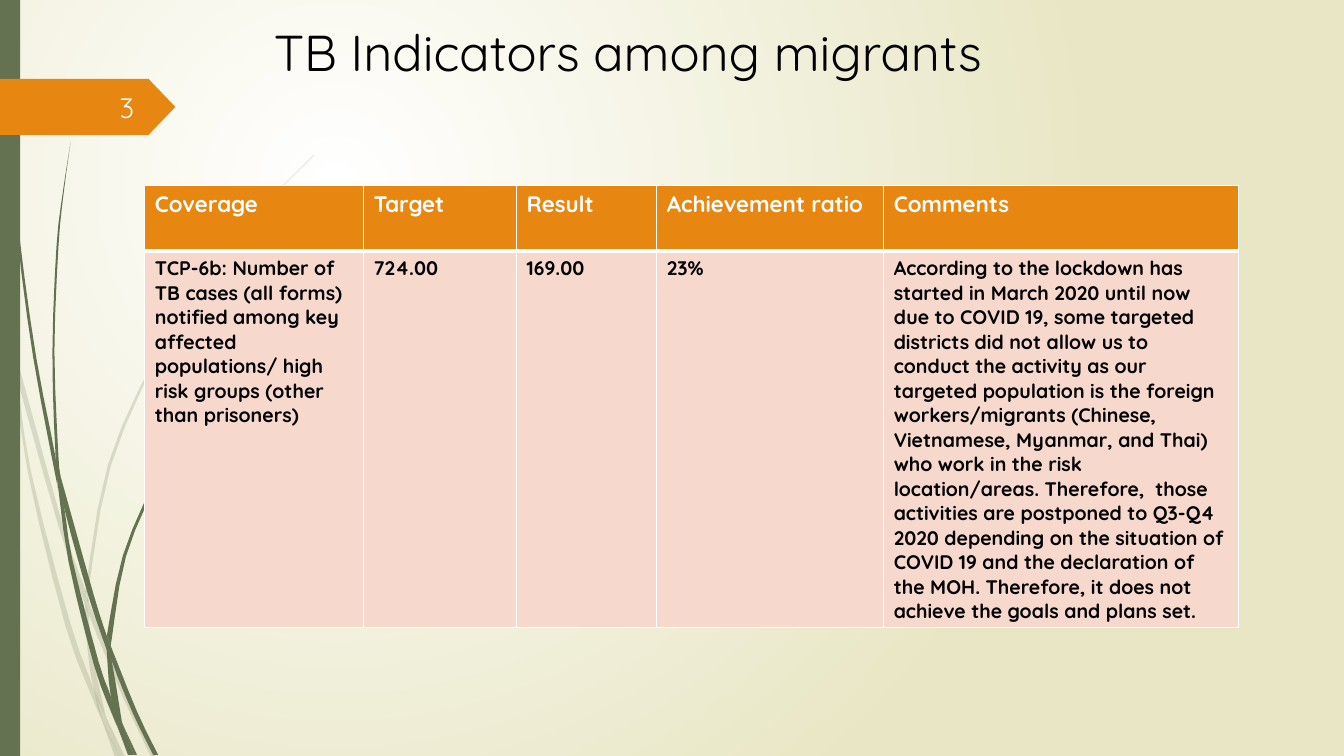
from lxml import etree
from pptx import Presentation, util as u
from pptx.dml import color
from pptx.enum import shapes, text
from pptx.oxml import ns

FONT = "Quicksand"
GREEN, ORANGE, PINK, WHITE, BLACK = "647252", "E78712", "F6D9CC", "FFFFFF", "000000"
GRID = 0.0254

PALE_BLADES = [
    ([(0, 299), (10, 344), (11, 350)], [(0, 282), (9, 322), (11, 350)]),
    ([(17, 376), (58, 522), (84, 599)], [(14, 345), (62, 520), (85, 586)]),
    ([(88, 610), (123, 694), (150, 751)], [(88, 596), (92, 607), (127, 692), (155, 751)]),
    ([(105, 711), (119, 751)], [(105, 711), (124, 751)]),
    ([(11, 350), (28, 470), (65, 621), (92, 693), (101, 714)],
     [(11, 350), (17, 376), (31, 469), (70, 619), (93, 683), (101, 714)]),
    ([(84, 599), (87, 646), (93, 683), (105, 711)], [(84, 599), (88, 610), (91, 646), (105, 711)]),
    ([(312, 153), (268, 197), (228, 244), (158, 348), (107, 461), (85, 584), (85, 586)],
     [(312, 154), (268, 198), (229, 245), (160, 349), (110, 462), (88, 584), (88, 596)]),
    ([(101, 714), (114, 751)], [(101, 714), (119, 751)]),
    ([(85, 586), (84, 599)], [(88, 596), (88, 610)]),
    ([(93, 683), (101, 714), (119, 751)], [(93, 683), (105, 711), (119, 751)]),
]
DARK_BLADES = [
    ([(3, 0), (4, 48), (7, 110), (17, 233), (33, 355), (56, 477), (57, 481)],
     [(4, 0), (5, 48), (8, 109), (19, 232), (36, 355), (55, 453), (57, 481)]),
    ([(60, 472), (64, 505), (88, 592), (106, 645)], [(60, 472), (93, 590), (106, 631)]),
    ([(110, 641), (111, 656), (132, 708), (152, 749)], [(110, 641), (136, 706), (157, 749)]),
    ([(57, 477), (68, 557), (93, 659), (111, 708), (117, 722)],
     [(57, 477), (64, 505), (72, 556), (98, 657), (110, 691), (117, 722)]),
    ([(70, 141), (62, 193), (56, 245), (52, 349), (55, 449), (60, 472)],
     [(70, 141), (63, 193), (58, 245), (54, 349), (58, 453), (60, 472)]),
    ([(122, 719), (133, 749)], [(122, 719), (136, 749)]),
    ([(55, 449), (57, 477), (64, 505)], [(55, 449), (60, 472), (64, 505)]),
    ([(260, 344), (231, 373), (204, 405), (156, 474), (122, 551), (106, 631)],
     [(261, 344), (231, 374), (205, 406), (158, 476), (125, 552), (111, 633), (110, 641)]),
    ([(117, 722), (127, 749)], [(117, 722), (131, 749)]),
    ([(106, 645), (110, 691), (122, 719)], [(106, 645), (111, 656), (121, 716), (122, 719)]),
    ([(106, 631), (106, 645)], [(110, 641), (111, 656)]),
    ([(110, 691), (117, 722), (130, 749)], [(110, 691), (122, 719), (133, 749)]),
]

COLUMNS = [5.51, 3.86, 3.53, 5.72, 8.94]
ROWS = [1.65, 9.5]
HEADER = ["Coverage", "Target", "Result", "Achievement ratio", "Comments"]
RESULTS = [
    "TCP-6b: Number of TB cases (all forms) notified among key affected populations/ "
    "high risk groups (other than prisoners)",
    "724.00", "169.00", "23%",
    "According to the lockdown has started in March 2020 until now due to COVID 19, some "
    "targeted districts did not allow us to conduct the activity as our targeted population "
    "is the foreign workers/migrants (Chinese, Vietnamese, Myanmar, and Thai) who work in the "
    "risk location/areas. Therefore,  those activities are postponed to Q3-Q4 2020 depending "
    "on the situation of COVID 19 and the declaration of the MOH. Therefore, it does not "
    "achieve the goals and plans set.",
]


def rgb(value):
    """Turn a hex string into a colour."""
    return color.RGBColor.from_string(value)


def paint(sp, fill):
    """Give a shape a plain fill without line or shadow."""
    sp.shadow.inherit = False
    sp.fill.solid()
    sp.fill.fore_color.rgb = rgb(fill)
    sp.line.fill.background()


def write(tf, words, size, fill, bold=False, align=text.PP_ALIGN.LEFT):
    """Add one run to the first paragraph of a text frame."""
    p = tf.paragraphs[0]
    p.alignment = align
    r = p.add_run()
    r.text = words
    r.font.name, r.font.size, r.font.bold = FONT, u.Pt(size), bold
    r.font.color.rgb = rgb(fill)


def add_text(s, box, words, size, fill, anchor, align):
    """Place a line of text in a box."""
    tf = s.shapes.add_textbox(*map(u.Cm, box)).text_frame
    tf.word_wrap = True
    tf.vertical_anchor = anchor
    write(tf, words, size, fill, align=align)


def smooth(knots, steps=3):
    """Trace a Catmull-Rom curve through the knots."""
    if len(knots) == 2:
        return knots
    k = [knots[0], *knots, knots[-1]]
    curve = [knots[0]]
    for a, b, c, d in zip(k, k[1:], k[2:], k[3:]):
        for i in range(1, steps + 1):
            t = i / steps
            curve.append(tuple(
                (2 * q + (m - n) * t + (2 * n - 5 * q + 4 * m - o) * t ** 2
                 + (3 * q - n - 3 * m + o) * t ** 3) / 2
                for n, q, m, o in zip(a, b, c, d)))
    return curve


def add_blades(s, box, blades, fill, alpha=100):
    """Draw pieces of grass, each between a left and a right edge."""
    x, y = box[:2]
    for left, right in blades:
        outline = smooth(left) + smooth(right)[::-1]
        points = [(u.Cm(x + a * GRID), u.Cm(y + b * GRID)) for a, b in outline]
        builder = s.shapes.build_freeform(*points[0])
        builder.add_line_segments(points[1:])
        sp = builder.convert_to_shape()
        paint(sp, fill)
        if alpha < 100:
            clr = sp.fill._xPr.find(ns.qn("a:solidFill"))[0]
            etree.SubElement(clr, ns.qn("a:alpha"), val=str(alpha * 1000))


def add_background(s):
    """Fill the background with a round gradient."""
    fill = s.background.fill
    fill.gradient()
    for stop, value, place in zip(fill.gradient_stops, (WHITE, "E8E6C4"), (0, 1)):
        stop.color.rgb = rgb(value)
        stop.position = place
    grad = s.element.xpath(".//a:gradFill")[0]
    grad.remove(grad.find(ns.qn("a:lin")))
    circle = etree.SubElement(grad, ns.qn("a:path"), path="circle")
    etree.SubElement(circle, ns.qn("a:fillToRect"), l="50000", t="50000", r="100000", b="100000")


def add_side(s, box):
    """Draw the grass, the green bar and the numbered arrow."""
    x, y, w, h = box
    add_blades(s, box, PALE_BLADES, GREEN, 20)
    add_blades(s, box, DARK_BLADES, GREEN)
    bar = s.shapes.add_shape(shapes.MSO_SHAPE.RECTANGLE, *map(u.Cm, (x, y, 0.51, h)))
    paint(bar, GREEN)
    arrow = s.shapes.add_shape(shapes.MSO_SHAPE.PENTAGON, *map(u.Cm, (x, y + 1.99, w, 1.41)))
    arrow.adjustments[0] = 0.48
    paint(arrow, ORANGE)
    add_text(s, (x + 1.47, y + 2.2, 2.16, 1.02), "3", 20, "FEFFFF",
             text.MSO_ANCHOR.MIDDLE, text.PP_ALIGN.RIGHT)


def border(cell, widths):
    """Give a cell white borders: left, right, top, bottom."""
    tcPr = cell._tc.get_or_add_tcPr()
    for i, (side, width) in enumerate(zip("LRTB", widths)):
        ln = etree.Element(ns.qn(f"a:ln{side}"), w=str(u.Pt(width)))
        solid = etree.SubElement(ln, ns.qn("a:solidFill"))
        etree.SubElement(solid, ns.qn("a:srgbClr"), val=WHITE)
        tcPr.insert(i, ln)


def add_indicators(s, box):
    """Fill the indicator table."""
    table = s.shapes.add_table(len(ROWS), len(COLUMNS), *map(u.Cm, box)).table
    for col, width in zip(table.columns, COLUMNS):
        col.width = u.Cm(width)
    for row, height in zip(table.rows, ROWS):
        row.height = u.Cm(height)
    styles = [(HEADER, 16, WHITE, ORANGE, (1, 1, 1, 3)),
              (RESULTS, 14, BLACK, PINK, (1, 1, 3, 1))]
    for row, (words, size, ink, fill, widths) in zip(table.rows, styles):
        for cell, entry in zip(row.cells, words):
            cell.fill.solid()
            cell.fill.fore_color.rgb = rgb(fill)
            border(cell, widths)
            write(cell.text_frame, entry, size, ink, bold=True)


def main():
    """Build the slide and save it."""
    prs = Presentation()
    prs.slide_width, prs.slide_height = u.Cm(33.87), u.Cm(19.05)
    s = prs.slides.add_slide(prs.slide_layouts[6])
    add_background(s)
    add_side(s, (0, 0, 4.42, 19.05))
    add_text(s, (6.65, 0.41, 24.77, 1.78), "TB Indicators among migrants", 36, BLACK,
             text.MSO_ANCHOR.TOP, text.PP_ALIGN.LEFT)
    add_indicators(s, (3.65, 4.67, sum(COLUMNS), sum(ROWS)))
    prs.save("out.pptx")


if __name__ == "__main__":
    main()
